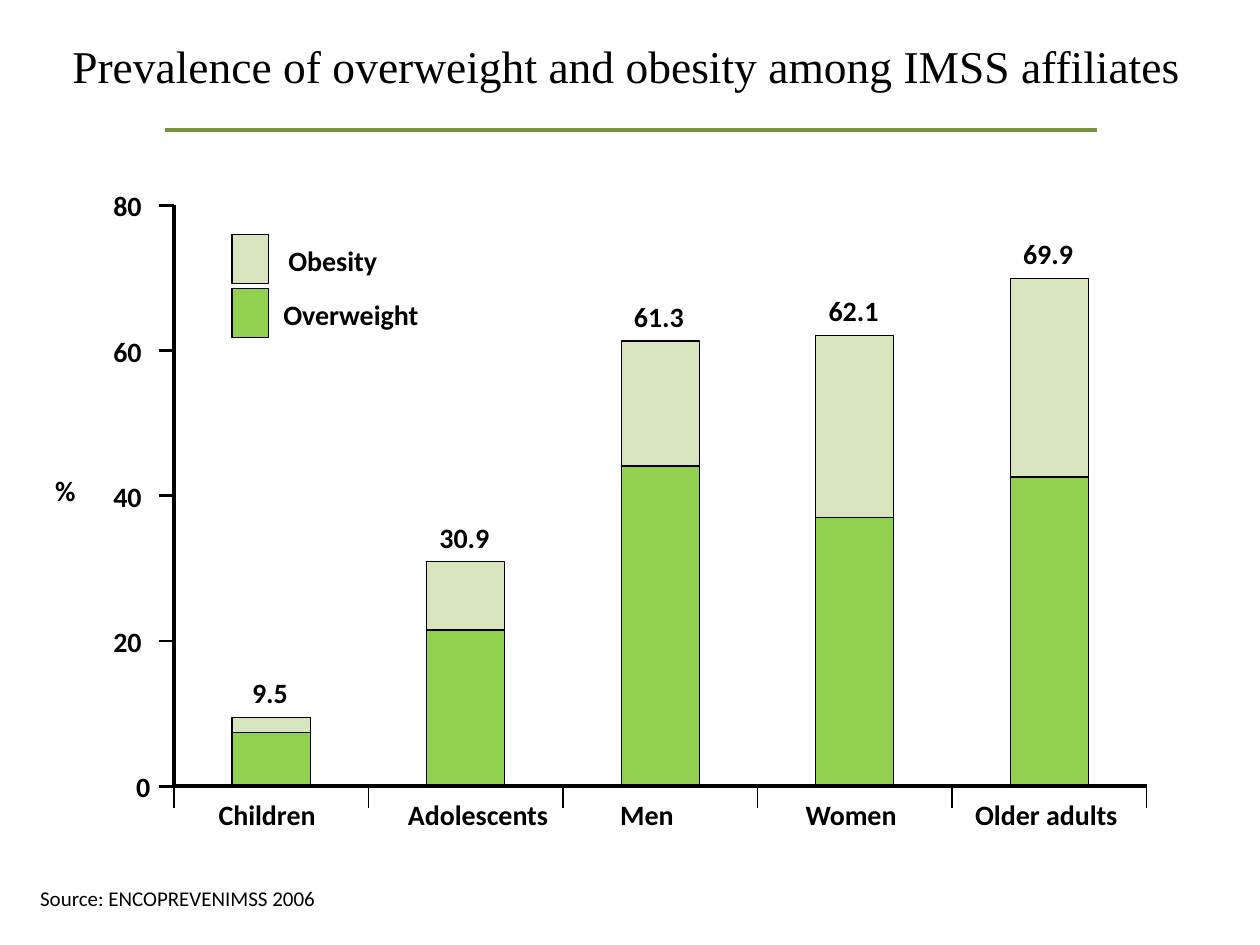
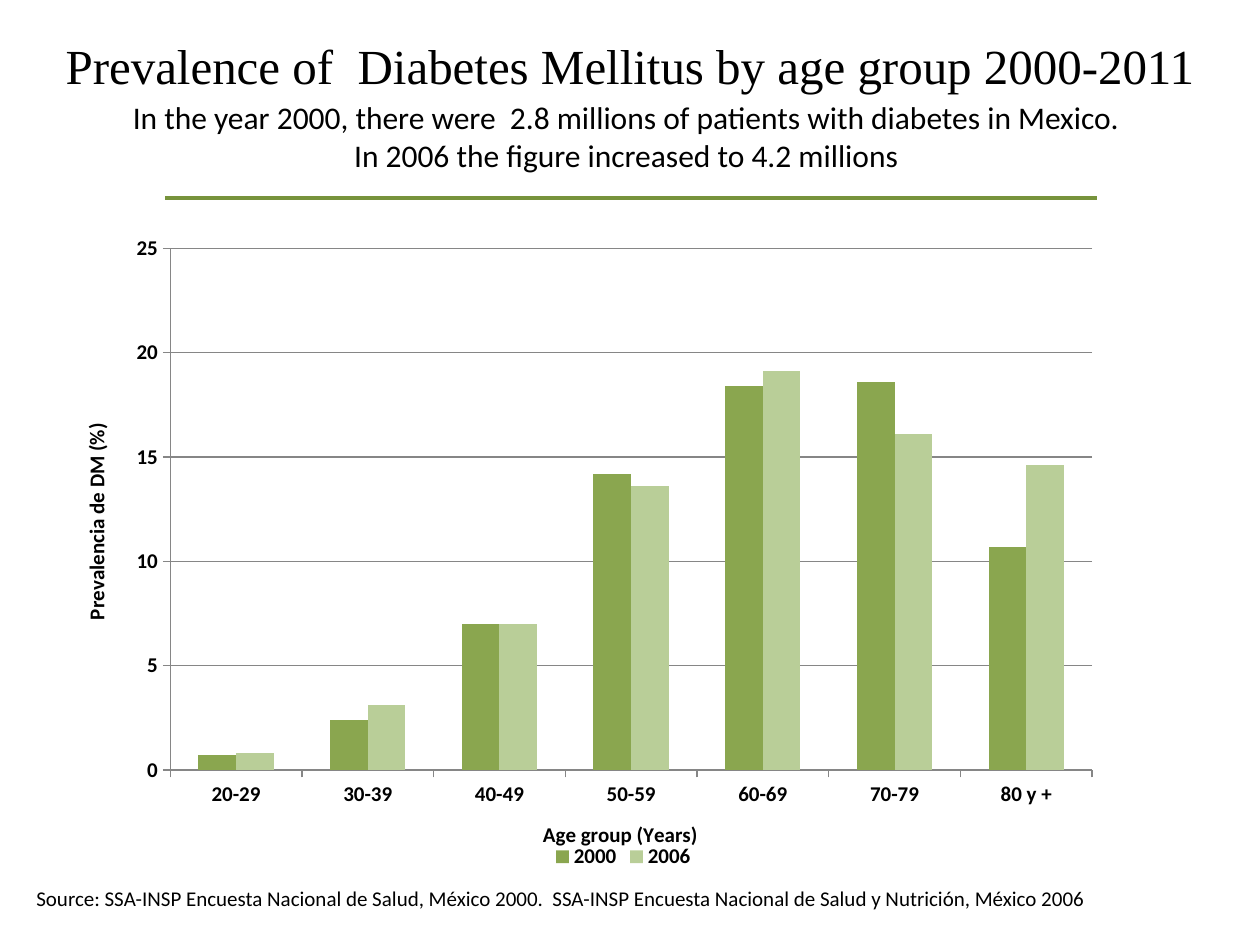
"""Build two slides on overweight, obesity and diabetes prevalence in Mexico."""
from lxml.etree import SubElement
from pptx import Presentation
from pptx.chart.data import CategoryChartData
from pptx.dml.color import RGBColor
from pptx.enum.chart import XL_CHART_TYPE as ChartType, XL_LEGEND_POSITION as LegendPosition
from pptx.enum.chart import XL_TICK_MARK as TickMark
from pptx.enum.shapes import MSO_CONNECTOR as Connector, MSO_SHAPE as Shape
from pptx.enum.text import PP_ALIGN as Align
from pptx.oxml import parse_xml
from pptx.oxml.ns import nsdecls, qn
from pptx.util import Inches, Pt

BLACK = RGBColor(0x00, 0x00, 0x00)
RULE_GREEN = RGBColor(0x77, 0x93, 0x3C)
OVERWEIGHT = RGBColor(0x92, 0xD0, 0x50)
OBESITY = RGBColor(0xD7, 0xE4, 0xBD)
YEAR_2000 = RGBColor(0x8A, 0xA6, 0x4F)
YEAR_2006 = RGBColor(0xB9, 0xCE, 0x98)
GRID_GREY = RGBColor(0x86, 0x86, 0x86)
BODY_FONT, TITLE_FONT = "Calibri", "Times New Roman"

deck = Presentation()
deck.slide_width, deck.slide_height = Inches(10), Inches(7.5)
COL, ROW = deck.slide_width / 100, deck.slide_height / 100


def write(slide, words, left, top, width, height, size=16, bold=True, align=Align.LEFT,
          font=BODY_FONT, wrap=False, inset=True):
    box = slide.shapes.add_textbox(int(left * COL), int(top * ROW), int(width * COL), int(height * ROW))
    frame = box.text_frame
    frame.word_wrap = wrap
    if not inset:
        frame.margin_left = frame.margin_right = frame.margin_top = frame.margin_bottom = 0
    frame.text = words
    for paragraph in frame.paragraphs:
        paragraph.alignment = align
        paragraph.font.size, paragraph.font.bold = Pt(size), bold
        paragraph.font.name, paragraph.font.color.rgb = font, BLACK


def draw_line(slide, x1, y1, x2, y2, weight, color=BLACK):
    stroke = slide.shapes.add_connector(
        Connector.STRAIGHT, int(x1 * COL), int(y1 * ROW), int(x2 * COL), int(y2 * ROW))
    stroke.line.width, stroke.line.color.rgb = Pt(weight), color
    SubElement(stroke._element.spPr, qn("a:effectLst"))


pages = [
    ("Prevalence of overweight and obesity among IMSS affiliates ", 26, (4.4, 3.33, 91.6, 7.2), 13.73,
     "Source: ENCOPREVENIMSS 2006", 2.2),
    ("Prevalence of  Diabetes Mellitus by age group 2000-2011", 28, (0, 3.07, 100, 7.6), 20.93,
     "Source: SSA-INSP Encuesta Nacional de Salud, México 2000.  "
     "SSA-INSP Encuesta Nacional de Salud y Nutrición, México 2006", 1.9),
]
slides = []
for title, title_size, title_area, rule_row, source, source_left in pages:
    slide = deck.slides.add_slide(deck.slide_layouts[6])
    write(slide, title, *title_area, title_size, False, Align.CENTER, TITLE_FONT, wrap=title_area[0] == 0)
    write(slide, source, source_left, 93.07, 98.3, 4, 12, False, wrap=True)
    draw_line(slide, 13.1, rule_row, 87.1, rule_row, 2.25, RULE_GREEN)
    slides.append(slide)
weight_slide, diabetes_slide = slides

AXIS_LEFT, AXIS_RIGHT, AXIS_TOP, BASELINE = 13.8, 91, 21.73, 83.2
PERCENT = (BASELINE - AXIS_TOP) / 80
BAR_WIDTH, LABEL_HEIGHT = 6.2, 4.93
groups = [
    ("Children", 7.4, 9.5, 21.2),
    ("Adolescents", 21.5, 30.9, 37.95),
    ("Men", 44.1, 61.3, 51.35),
    ("Women", 37.0, 62.1, 67.55),
    ("Older adults", 42.6, 69.9, 83.05),
]
group_width = (AXIS_RIGHT - AXIS_LEFT) / len(groups)

blocks = [(18.4, 24.8, 2.9, 5.2, OBESITY), (18.4, 30.53, 2.9, 5.2, OVERWEIGHT)]
for index, (group, overweight, total, name_center) in enumerate(groups):
    bar_left = AXIS_LEFT + index * group_width + (group_width - BAR_WIDTH) / 2
    middle, bar_top = BASELINE - overweight * PERCENT, BASELINE - total * PERCENT
    blocks.append((bar_left, middle, BAR_WIDTH, BASELINE - middle, OVERWEIGHT))
    blocks.append((bar_left, bar_top, BAR_WIDTH, middle - bar_top, OBESITY))
    write(weight_slide, str(total), bar_left, bar_top - 5.07, 6, LABEL_HEIGHT, align=Align.CENTER)
    write(weight_slide, group, name_center - 7, 83.73, 14, LABEL_HEIGHT, align=Align.CENTER)

for left, top, width, height, color in blocks:
    block = weight_slide.shapes.add_shape(
        Shape.RECTANGLE, int(left * COL), int(top * ROW), int(width * COL), int(height * ROW))
    block.shadow.inherit = False
    block.fill.solid()
    block.fill.fore_color.rgb = color
    block.line.color.rgb, block.line.width = BLACK, Pt(0.75)

write(weight_slide, "Obesity", 21.9, 25.07, 9.2, LABEL_HEIGHT)
write(weight_slide, "Overweight", 21.5, 30.8, 12.9, LABEL_HEIGHT)
write(weight_slide, "%", 3.4, 49.47, 3.6, LABEL_HEIGHT)

draw_line(weight_slide, AXIS_LEFT, AXIS_TOP, AXIS_LEFT, BASELINE, 2.25)
draw_line(weight_slide, AXIS_LEFT, BASELINE, AXIS_RIGHT, BASELINE, 2.25)
for value in range(0, 81, 20):
    level = BASELINE - value * PERCENT
    draw_line(weight_slide, AXIS_LEFT - 1.2, level, AXIS_LEFT, level, 1.63)
    write(weight_slide, str(value), 9 if value else 10.8, level - 1.73, 2.3 if value else 1.1, 3.6, inset=False)
for index in range(len(groups) + 1):
    edge = AXIS_LEFT + index * group_width
    draw_line(weight_slide, edge, BASELINE + 2.27, edge, BASELINE, 0.75)

write(diabetes_slide, "In the year 2000, there were  2.8 millions of patients with diabetes in Mexico. \n"
      "In 2006 the figure increased to 4.2 millions ",
      0, 9.73, 100, 9.47, 18, False, Align.CENTER, wrap=True)

prevalence = CategoryChartData()
prevalence.categories = ["20-29", "30-39", "40-49", "50-59", "60-69", "70-79", "80 y +"]
prevalence.add_series("2000", [0.7, 2.4, 7, 14.2, 18.4, 18.6, 10.7])
prevalence.add_series("2006", [0.8, 3.1, 7, 13.6, 19.1, 16.1, 14.6])
chart = diabetes_slide.shapes.add_chart(
    ChartType.COLUMN_CLUSTERED, int(6.2 * COL), int(22.8 * ROW),
    int(81.3 * COL), int(69.87 * ROW), prevalence).chart
chart.has_title = False
chart.font.name, chart.font.size, chart.font.bold = BODY_FONT, Pt(12), True
chart.font.color.rgb = BLACK

columns = chart.plots[0]
columns.gap_width, columns.overlap, columns.vary_by_categories = 150, 0, False
for series, color in zip(columns.series, (YEAR_2000, YEAR_2006)):
    series.format.fill.solid()
    series.format.fill.fore_color.rgb = color

for axis, axis_title in ((chart.category_axis, "Age group (Years)"), (chart.value_axis, "Prevalencia de DM (%)")):
    axis.major_tick_mark, axis.minor_tick_mark = TickMark.OUTSIDE, TickMark.NONE
    axis.format.line.color.rgb, axis.format.line.width = GRID_GREY, Pt(0.75)
    axis.tick_labels.font.size, axis.tick_labels.font.bold = Pt(12), True
    axis.axis_title.text_frame.text = axis_title
    heading = axis.axis_title.text_frame.paragraphs[0].font
    heading.name, heading.size, heading.bold = BODY_FONT, Pt(12), True
    heading.color.rgb = BLACK
scale = chart.value_axis
scale.minimum_scale, scale.maximum_scale, scale.major_unit = 0, 25, 5
scale.has_major_gridlines = True
scale.major_gridlines.format.line.color.rgb = GRID_GREY
scale.major_gridlines.format.line.width = Pt(0.75)

chart.has_legend = True
chart.legend.position, chart.legend.include_in_layout = LegendPosition.BOTTOM, False
chart.legend.font.size, chart.legend.font.bold = Pt(12), True

placements = [
    (chart._chartSpace.chart.plotArea, '<c:layoutTarget val="inner"/>', 0.09, 0.05,
     '<c:w val="0.9"/><c:h val="0.79"/>'),
    (chart.category_axis.axis_title._element, "", 0.45, 0.91, ""),
    (chart.legend._element, "", 0.46, 0.95, ""),
]
for part, target, x, y, extent in placements:
    for automatic in part.findall(qn("c:layout")):
        part.remove(automatic)
    overlay = part.find(qn("c:overlay"))
    part.insert(0 if overlay is None else part.index(overlay), parse_xml(
        f'<c:layout {nsdecls("c")}><c:manualLayout>{target}<c:xMode val="edge"/><c:yMode val="edge"/>'
        f'<c:x val="{x}"/><c:y val="{y}"/>{extent}</c:manualLayout></c:layout>'))

deck.save("out.pptx")
